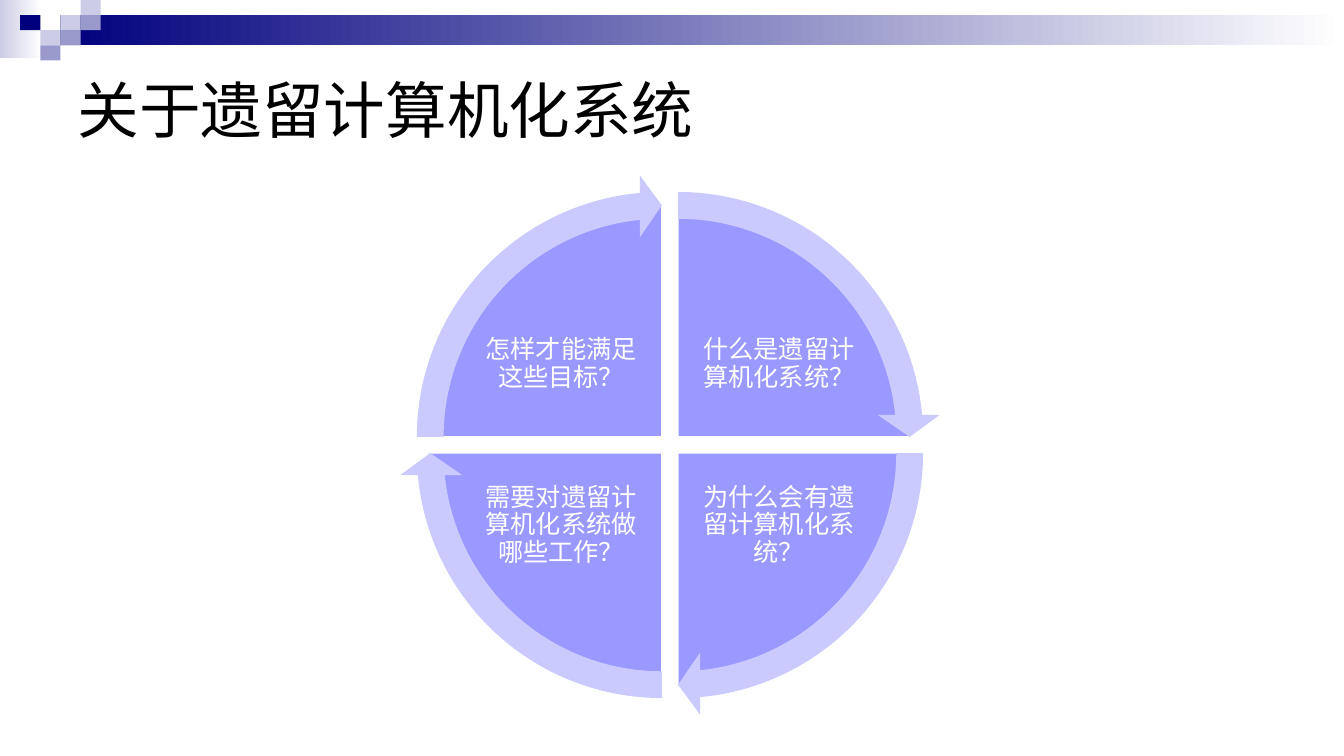
import pptx
import pptx.dml.color
import pptx.enum.shapes
import pptx.enum.text
import pptx.util

Inches = pptx.util.Inches
Pt = pptx.util.Pt
SHAPE = pptx.enum.shapes.MSO_SHAPE
ALIGN = pptx.enum.text.PP_ALIGN

FONT = "Arial"
NAVY, MID, PALE, WHITE = "00007D", "9999CC", "CCCCE6", "FFFFFF"
GRADIENTS = [(0, 0, 0.42, 0.58, PALE), (0.6, 0.15, 12.73, 0.3, NAVY)]
SQUARES = [(0.6, 0.15, PALE), (0.8, 0, PALE), (0.8, 0.15, MID), (0.4, 0.3, PALE),
           (0.2, 0.15, NAVY), (0.6, 0.3, MID), (0.4, 0.45, MID)]
QUARTER_TURN = 54
QUADRANTS = [
    (1, -1, 162, "什么是遗留计算机化系统？"),
    (1, 1, 0, "为什么会有遗留计算机化系统？"),
    (-1, 1, 54, "需要对遗留计算机化系统做哪些工作？"),
    (-1, -1, 108, "怎样才能满足这些目标？"),
]


def color(code):
    """Return the colour for a hex string."""
    return pptx.dml.color.RGBColor.from_string(code)


def add_plain(page, kind, box, fill=None, adjustments=()):
    """Add a preset shape without shadow or outline."""
    shape = page.shapes.add_shape(kind, *(Inches(value) for value in box))
    shape.shadow.inherit = False
    shape.line.fill.background()
    if fill:
        shape.fill.solid()
        shape.fill.fore_color.rgb = color(fill)
    for index, value in enumerate(adjustments):
        shape.adjustments[index] = value
    return shape


def add_text(page, box, text, size, code, align, inset=(0.1, 0.05)):
    """Add a wrapped, vertically centred text box and return its paragraph."""
    frame = page.shapes.add_textbox(*(Inches(value) for value in box)).text_frame
    frame.word_wrap = True
    frame.vertical_anchor = pptx.enum.text.MSO_ANCHOR.MIDDLE
    frame.margin_left = frame.margin_right = Inches(inset[0])
    frame.margin_top = frame.margin_bottom = Inches(inset[1])
    para = frame.paragraphs[0]
    para.text = text
    para.alignment = align
    para.font.name = FONT
    para.font.size = Pt(size)
    para.font.color.rgb = color(code)
    return para


def add_header(page, left, top):
    """Draw the gradient bar and the small squares at its left end."""
    for x, y, width, height, start in GRADIENTS:
        bar = add_plain(page, SHAPE.RECTANGLE, (left + x, top + y, width, height))
        bar.fill.gradient()
        bar.fill.gradient_angle = 0
        for stop, code, position in zip(bar.fill.gradient_stops, (start, WHITE), (0, 1)):
            stop.color.rgb = color(code)
            stop.position = position
    for x, y, code in SQUARES:
        add_plain(page, SHAPE.RECTANGLE, (left + x, top + y, 0.2, 0.15), code)


def centered(x, y, width, height):
    """Return the box of a given size around a centre."""
    return x - width / 2, y - height / 2, width, height


def add_cycle(page, left, top, size):
    """Draw four labelled quarter pies and the arrows running round them."""
    middle_x, middle_y = left + size / 2, top + size / 2
    gap, pie_size, arrow_size = 0.08, size - 0.73, size - 0.16
    for side, level, start, label in QUADRANTS:
        box = centered(middle_x + side * gap, middle_y + level * gap, pie_size, pie_size)
        pie = add_plain(page, SHAPE.PIE, box, "9999FF", (start, (start + QUARTER_TURN) % 216))
        pie.line.color.rgb = color(WHITE)
        pie.line.width = Pt(1)
        label_box = centered(middle_x + side * 1.08, middle_y + level * 0.8, 1.71, 1.27)
        para = add_text(page, label_box, label, 18, WHITE, ALIGN.CENTER, (0.03, 0.03))
        para.line_spacing = 0.9
        para.space_after = Pt(6.3)
    for side, level, start, label in QUADRANTS:
        box = centered(middle_x + side * gap, middle_y + level * gap, arrow_size, arrow_size)
        add_plain(page, SHAPE.CIRCULAR_ARROW, box, "CACAFF",
                  (0.051, 3.275, start + 50.725, start, 0.059))


def main():
    """Build the slide and save it."""
    deck = pptx.Presentation()
    deck.slide_width, deck.slide_height = Inches(13.33), Inches(7.5)
    page = deck.slides.add_slide(deck.slide_layouts[6])
    add_header(page, 0, 0)
    add_cycle(page, 3.96, 1.73, 5.37)
    add_text(page, (0.67, 0.5, 12, 1.17), "关于遗留计算机化系统", 44, "000000", ALIGN.LEFT)
    deck.save("out.pptx")


if __name__ == "__main__":
    main()
